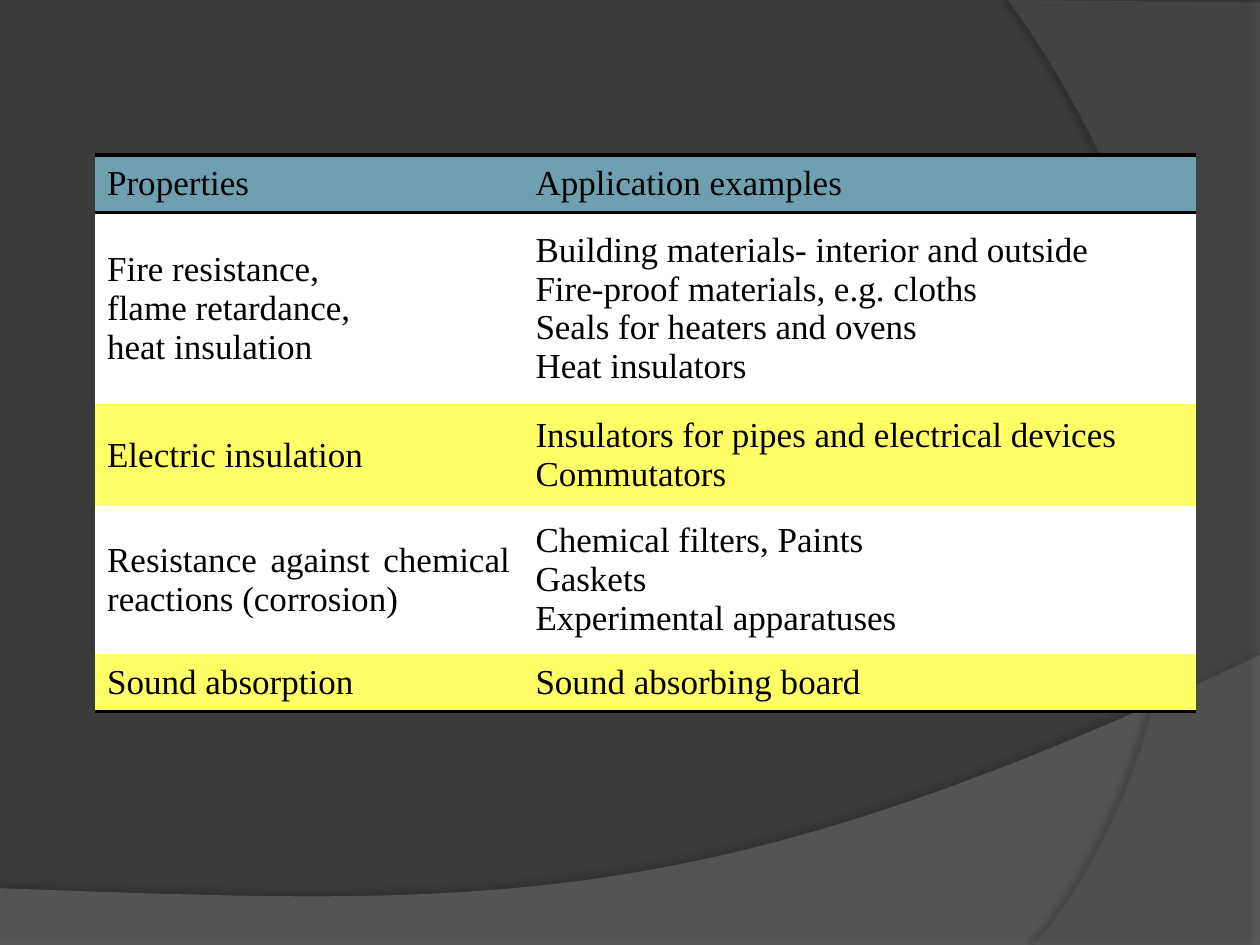
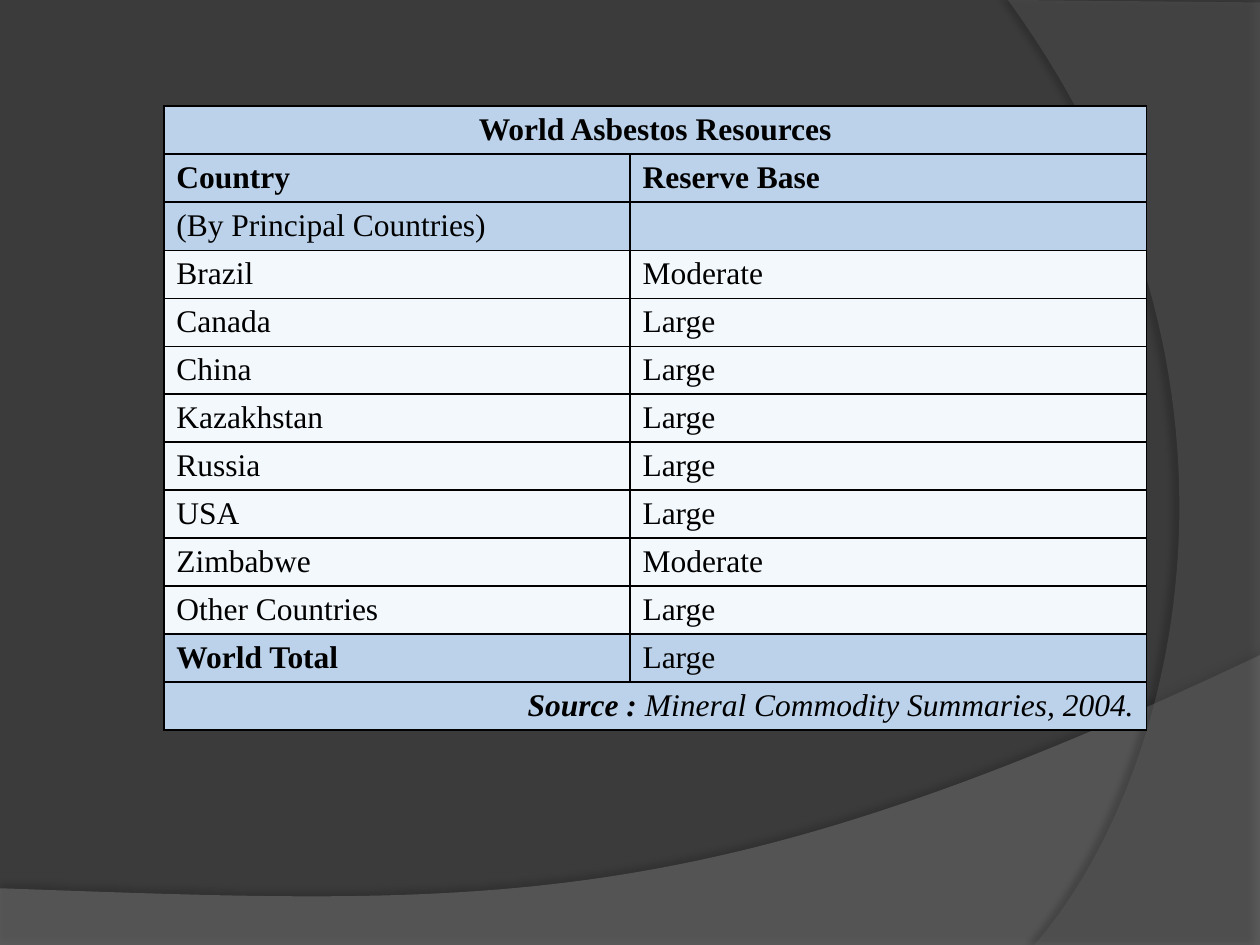
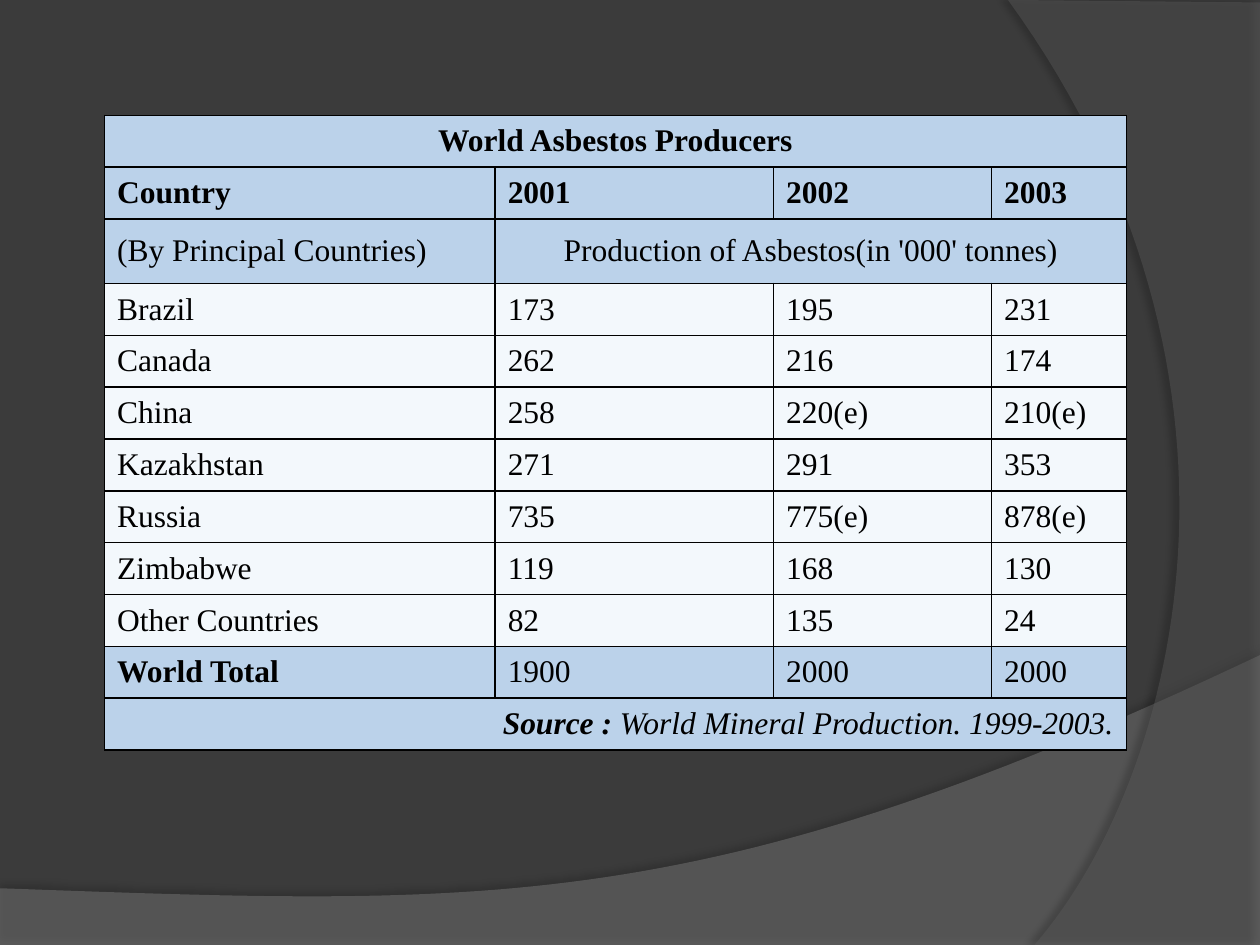
import dataclasses
import lxml.etree
import pptx
import pptx.dml.color
import pptx.enum.text
import pptx.oxml.ns
import pptx.util

ALIGN = pptx.enum.text.PP_ALIGN


@dataclasses.dataclass(frozen=True)
class Theme:
    font: str = "Times New Roman"
    ink: str = "000000"
    background: str = "3B3B3B"
    lower_swoosh: str = "7F7F7F"
    right_swoosh: str = "5E5E5E"
    header: str = "6EA0B0"
    white: str = "FFFFFF"
    highlight: str = "FFFF66"
    band: str = "BBD2EA"
    body: str = "F3F8FC"
    property_size: int = 20
    country_size: int = 18
    rule: float = 2
    grid: float = 1


THEME = Theme()
WIDTH, HEIGHT = pptx.util.Inches(10), pptx.util.Inches(7.5)

PROPERTIES = [
    ["Properties", "Application examples"],
    ["Fire resistance,\nflame retardance,\nheat insulation",
     "Building materials- interior and outside\nFire-proof materials, e.g. cloths\n"
     "Seals for heaters and ovens\nHeat insulators"],
    ["Electric insulation", "Insulators for pipes and electrical devices\nCommutators"],
    ["Resistance against chemical reactions (corrosion)",
     "Chemical filters, Paints\nGaskets\nExperimental apparatuses"],
    ["Sound absorption", "Sound absorbing board"],
]
RESOURCES = [
    ["World Asbestos Resources"],
    ["Country", "Reserve Base"],
    ["(By Principal Countries)", ""],
    ["Brazil", "Moderate"],
    ["Canada", "Large"],
    ["China", "Large"],
    ["Kazakhstan", "Large"],
    ["Russia", "Large"],
    ["USA", "Large"],
    ["Zimbabwe", "Moderate"],
    ["Other Countries", "Large"],
    ["World Total", "Large"],
    [" Mineral Commodity Summaries, 2004."],
]
PRODUCERS = [
    ["World Asbestos Producers"],
    ["Country", "2001", "2002", "2003"],
    ["(By Principal Countries)", "Production of Asbestos(in '000' tonnes)"],
    ["Brazil", "173", "195", "231"],
    ["Canada", "262", "216", "174"],
    ["China", "258", "220(e)", "210(e)"],
    ["Kazakhstan", "271", "291", "353"],
    ["Russia", "735", "775(e)", "878(e)"],
    ["Zimbabwe", "119", "168", "130"],
    ["Other Countries", "82", "135", "24"],
    ["World Total", "1900", "2000", "2000"],
    [" World Mineral Production. 1999-2003."],
]


def rgb(color):
    return pptx.dml.color.RGBColor.from_string(color)


def add_element(parent, tag, **attributes):
    element = lxml.etree.SubElement(parent, pptx.oxml.ns.qn(tag))
    for name, value in attributes.items():
        element.set(name, str(value))
    return element


def add_color(parent, color, opacity=100):
    element = add_element(parent, "a:srgbClr", val=color)
    add_element(element, "a:alpha", val=opacity * 1000)


def curve(start, first_control, second_control, end, steps=60):
    points = []
    for step in range(steps + 1):
        t = step / steps
        weights = ((1 - t) ** 3, 3 * t * (1 - t) ** 2, 3 * t * t * (1 - t), t ** 3)
        controls = (start, first_control, second_control, end)
        points.append(tuple(sum(weight * control[axis] for weight, control in zip(weights, controls))
                            for axis in (0, 1)))
    return points


def add_swoosh(slide, points, color, opacity, shadow_opacity, distance, angle):
    scaled = [(round(x / 10 * WIDTH), round(y / 7.5 * HEIGHT)) for x, y in points]
    builder = slide.shapes.build_freeform(*scaled[0])
    builder.add_line_segments(scaled[1:], close=True)
    shape = builder.convert_to_shape()
    shape.shadow.inherit = False
    shape.line.fill.background()
    shape.fill.solid()
    shape.fill.fore_color.rgb = rgb(color)
    properties = shape.fill._xPr
    fill_color = properties.find(".//" + pptx.oxml.ns.qn("a:srgbClr"))
    add_element(fill_color, "a:alpha", val=opacity * 1000)
    effects = properties.find(pptx.oxml.ns.qn("a:effectLst"))
    shadow = add_element(effects, "a:outerShdw", blurRad=pptx.util.Pt(4), dist=pptx.util.Pt(distance),
                         dir=angle * 60000, algn="ctr", rotWithShape=0)
    add_color(shadow, THEME.ink, shadow_opacity)


def add_backdrop(slide):
    lower_edge = curve((10, 5.2), (5.59, 7.29), (3.91, 7.19), (0, 7.05))
    add_swoosh(slide, [(0, 7.5), (10, 7.5)] + lower_edge, THEME.lower_swoosh, 45, 35, 3.5, 270)
    right_edge = curve((8.21, 7.5), (9.35, 6.19), (10.18, 3), (8, 0))
    add_swoosh(slide, [(10, 0.02), (10, 7.5)] + right_edge, THEME.right_swoosh, 40, 45, 4, 180)


def write_text(cell, text, *, size, bold=False, italic=False, align=ALIGN.JUSTIFY, lead=""):
    cell.vertical_anchor = pptx.enum.text.MSO_ANCHOR.MIDDLE
    cell.margin_top = cell.margin_bottom = pptx.util.Inches(0.04)
    frame = cell.text_frame
    for index, line in enumerate(text.split("\n")):
        paragraph = frame.add_paragraph() if index else frame.paragraphs[0]
        paragraph.alignment = align
        for content, weight in ((lead, True), (line, bold)):
            if content:
                run = paragraph.add_run()
                run.text = content
                font = run.font
                font.name, font.size = THEME.font, pptx.util.Pt(size)
                font.bold, font.italic = weight, italic
                font.color.rgb = rgb(THEME.ink)
        if not paragraph.runs:
            add_element(paragraph._p, "a:endParaRPr", sz=size * 100)


def style_cell(cell, fill, left=0, right=0, top=0, bottom=0):
    properties = cell._tc.get_or_add_tcPr()
    for side, width in (("L", left), ("R", right), ("T", top), ("B", bottom)):
        line = add_element(properties, f"a:ln{side}", w=pptx.util.Pt(width))
        if width:
            add_color(add_element(line, "a:solidFill"), THEME.ink)
        else:
            add_element(line, "a:noFill")
    cell.fill.solid()
    cell.fill.fore_color.rgb = rgb(fill)


def add_grid(slide, box, columns, rows):
    left, top, width, height = (round(share * side) for share, side in zip(box, (WIDTH, HEIGHT) * 2))
    table = slide.shapes.add_table(len(rows), len(columns), left, top, width, height).table
    for column, weight in zip(table.columns, columns):
        column.width = round(width * weight / sum(columns))
    for row, weight in zip(table.rows, rows):
        row.height = round(height * weight / sum(rows))
    return table


def add_property_table(slide, box, columns, rows, entries):
    table = add_grid(slide, box, columns, rows)
    last = len(entries) - 1
    for row, texts in enumerate(entries):
        fill = THEME.header if row == 0 else (THEME.highlight, THEME.white)[row % 2]
        for column, text in enumerate(texts):
            cell = table.cell(row, column)
            style_cell(cell, fill, top=THEME.rule if row < 2 else 0,
                       bottom=THEME.rule if row in (0, last) else 0)
            write_text(cell, text, size=THEME.property_size)


def add_country_table(slide, box, columns, rows, entries):
    table = add_grid(slide, box, columns, rows)
    last_row, last_column = len(entries) - 1, len(columns) - 1
    for row, texts in enumerate(entries):
        fill = THEME.body if 3 <= row < last_row - 1 else THEME.band
        for column in range(len(columns)):
            style_cell(table.cell(row, column), fill, *[THEME.grid] * 4)
        for column, text in enumerate(texts):
            cell = table.cell(row, column)
            spans = column == len(texts) - 1 and column < last_column
            if spans:
                cell.merge(table.cell(row, last_column))
            if row == last_row:
                write_text(cell, text, size=THEME.country_size, italic=True,
                           align=ALIGN.RIGHT, lead="Source :")
            else:
                write_text(cell, text, size=THEME.country_size,
                           bold=row < 2 or (row == last_row - 1 and column == 0),
                           align=ALIGN.CENTER if spans else ALIGN.JUSTIFY)


def main():
    presentation = pptx.Presentation()
    presentation.slide_width, presentation.slide_height = WIDTH, HEIGHT
    background = presentation.slide_master.background.fill
    background.solid()
    background.fore_color.rgb = rgb(THEME.background)
    pages = [
        (add_property_table, (0.075, 0.164, 0.874, 0.589), (3.4, 5.34),
         (0.46, 1.52, 0.81, 1.17, 0.46), PROPERTIES),
        (add_country_table, (0.13, 0.112, 0.78, 0.66), (3.7, 4.1), [1] * len(RESOURCES), RESOURCES),
        (add_country_table, (0.083, 0.122, 0.811, 0.672), (3.1, 2.21, 1.73, 1.07),
         [0.51 if row == 2 else 0.41 for row in range(len(PRODUCERS))], PRODUCERS),
    ]
    for add_content, box, columns, rows, entries in pages:
        slide = presentation.slides.add_slide(presentation.slide_layouts[6])
        add_backdrop(slide)
        add_content(slide, box, columns, rows, entries)
    presentation.save("out.pptx")


if __name__ == "__main__":
    main()
